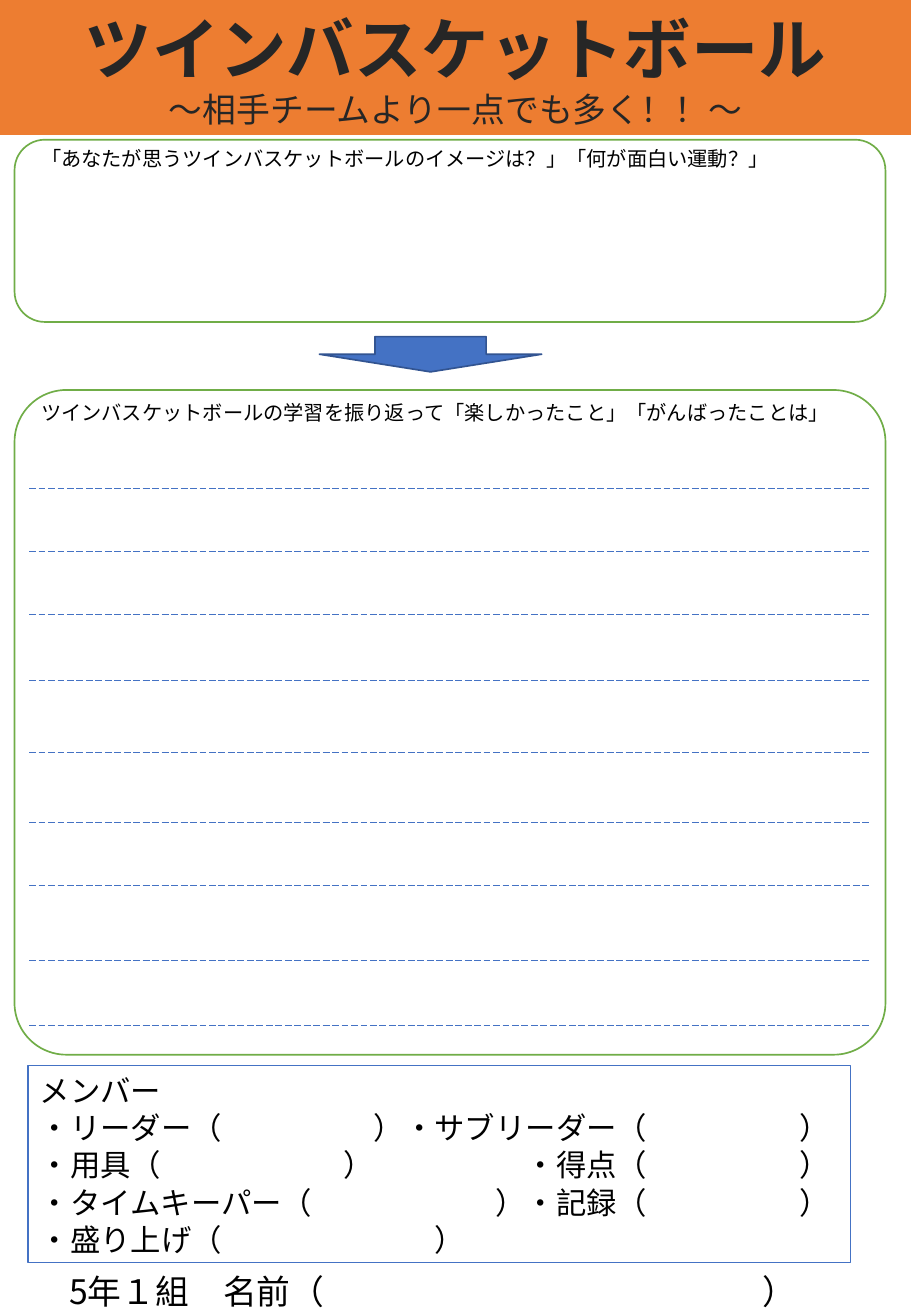
from lxml import etree
from pptx import Presentation
from pptx.dml.color import RGBColor
from pptx.enum.dml import MSO_LINE
from pptx.enum.shapes import MSO_CONNECTOR, MSO_SHAPE
from pptx.enum.text import MSO_ANCHOR, PP_ALIGN
from pptx.oxml.ns import qn
from pptx.util import Inches, Pt

FONT = "Noto Sans CJK JP"
LINE_HEIGHT = 1.22
COLORS = {
    "banner": "ED7D31", "title": "262626", "text": "000000",
    "frame": "70AD47", "blue": "4472C4", "arrow_edge": "325491",
}
RECT, ROUND_RECT = MSO_SHAPE.RECTANGLE, MSO_SHAPE.ROUNDED_RECTANGLE
DOWN_ARROW = MSO_SHAPE.DOWN_ARROW
STRAIGHT, LONG_DASH = MSO_CONNECTOR.STRAIGHT, MSO_LINE.LONG_DASH
LEFT, CENTER = PP_ALIGN.LEFT, PP_ALIGN.CENTER
TOP, MIDDLE = MSO_ANCHOR.TOP, MSO_ANCHOR.MIDDLE

# Each line of the member list with the tab stops (inches) of its blanks
MEMBER_LINES = [
    ("メンバー", []),
    ("・リーダー（\t）・サブリーダー（\t）", [2.75, 6.25]),
    ("・用具（\t）\t・得点（\t）", [2.5, 4, 6.25]),
    ("・タイムキーパー（\t）・記録（\t）", [3.75, 6.25]),
    ("・盛り上げ（\t）", [3.25]),
]
WRITING_LINES = [4.02, 4.54, 5.06, 5.6, 6.19, 6.77, 7.29, 7.9, 8.44]


def rgb(name):
    return RGBColor.from_string(COLORS[name])


def add_outline(slide, kind, box, fill=None, line=None, width=1):
    shape = slide.shapes.add_shape(kind, *map(Inches, box))
    shape.shadow.inherit = False
    if fill:
        shape.fill.solid()
        shape.fill.fore_color.rgb = rgb(fill)
    else:
        shape.fill.background()
    if line:
        shape.line.color.rgb = rgb(line)
        shape.line.width = Pt(width)
    else:
        shape.line.fill.background()
    return shape


def prepare_frame(frame, lines, anchor=TOP):
    frame.word_wrap = True
    frame.vertical_anchor = anchor
    frame.text = "\n".join(lines)


def format_paragraph(paragraph, size, color="text", bold=False, align=LEFT):
    paragraph.alignment = align
    paragraph.line_spacing = Pt(round(size * LINE_HEIGHT, 1))
    for run in paragraph.runs:
        font = run.font
        font.name, font.size, font.bold = FONT, Pt(size), bold
        font.color.rgb = rgb(color)
        east_asian = etree.SubElement(font._element, qn("a:ea"))
        east_asian.set("typeface", FONT)


def add_tab_stops(paragraph, stops):
    if not stops:
        return
    tab_list = etree.SubElement(paragraph._p.get_or_add_pPr(), qn("a:tabLst"))
    for stop in stops:
        tab = etree.SubElement(tab_list, qn("a:tab"))
        tab.set("pos", str(Inches(stop)))
        tab.set("algn", "l")


def add_label(slide, box, text, size):
    label = slide.shapes.add_textbox(*map(Inches, box))
    prepare_frame(label.text_frame, [text])
    format_paragraph(label.text_frame.paragraphs[0], size)
    return label


def add_banner(slide, box):
    banner = add_outline(slide, RECT, box, fill="banner")
    prepare_frame(banner.text_frame, ["ツインバスケットボール",
                                      "〜相手チームより一点でも多く！！〜"], MIDDLE)
    title, subtitle = banner.text_frame.paragraphs
    format_paragraph(title, 40, "title", True, CENTER)
    format_paragraph(subtitle, 20, "title", False, CENTER)


def add_question_panel(slide, box, question, text_offset=0, corner=None):
    left, top, width, _ = box
    add_label(slide, (left + 0.12, top + text_offset, width - 0.24, 0.3), question, 12)
    panel = add_outline(slide, ROUND_RECT, box, line="frame")
    if corner:
        panel.adjustments[0] = corner


def add_writing_lines(slide, left, right, heights):
    for y in heights:
        rule = slide.shapes.add_connector(
            STRAIGHT, Inches(left), Inches(y), Inches(right), Inches(y))
        rule.line.color.rgb = rgb("blue")
        rule.line.width = Pt(0.5)
        rule.line.dash_style = LONG_DASH
        etree.SubElement(rule._element.spPr, qn("a:effectLst"))


def add_member_list(slide, box):
    members = add_outline(slide, RECT, box, line="blue", width=0.75)
    prepare_frame(members.text_frame, [text for text, _ in MEMBER_LINES])
    for paragraph, (_, stops) in zip(members.text_frame.paragraphs, MEMBER_LINES):
        format_paragraph(paragraph, 18)
        add_tab_stops(paragraph, stops)


def add_name_field(slide, box):
    name_field = add_label(slide, box, "5年１組　名前（\t）", 20)
    name_field.text_frame.margin_left = Inches(0.16)
    add_tab_stops(name_field.text_frame.paragraphs[0], [5.71])


def main():
    prs = Presentation()
    prs.slide_width, prs.slide_height = Inches(7.5), Inches(10.83)
    slide = prs.slides.add_slide(prs.slide_layouts[6])
    add_banner(slide, (0, 0, 7.5, 1.11))
    add_question_panel(slide, (0.12, 1.15, 7.17, 1.5),
                       "「あなたが思うツインバスケットボールのイメージは？」「何が面白い運動？」")
    add_outline(slide, DOWN_ARROW, (2.63, 2.77, 1.83, 0.29), "blue", "arrow_edge")
    add_question_panel(slide, (0.12, 3.21, 7.17, 5.47),
                       "ツインバスケットボールの学習を振り返って「楽しかったこと」「がんばったことは」",
                       text_offset=0.03, corner=0.078)
    add_writing_lines(slide, 0.24, 7.17, WRITING_LINES)
    add_member_list(slide, (0.23, 8.77, 6.77, 1.62))
    add_name_field(slide, (0.41, 10.4, 6.58, 0.43))
    prs.save("out.pptx")


if __name__ == "__main__":
    main()
